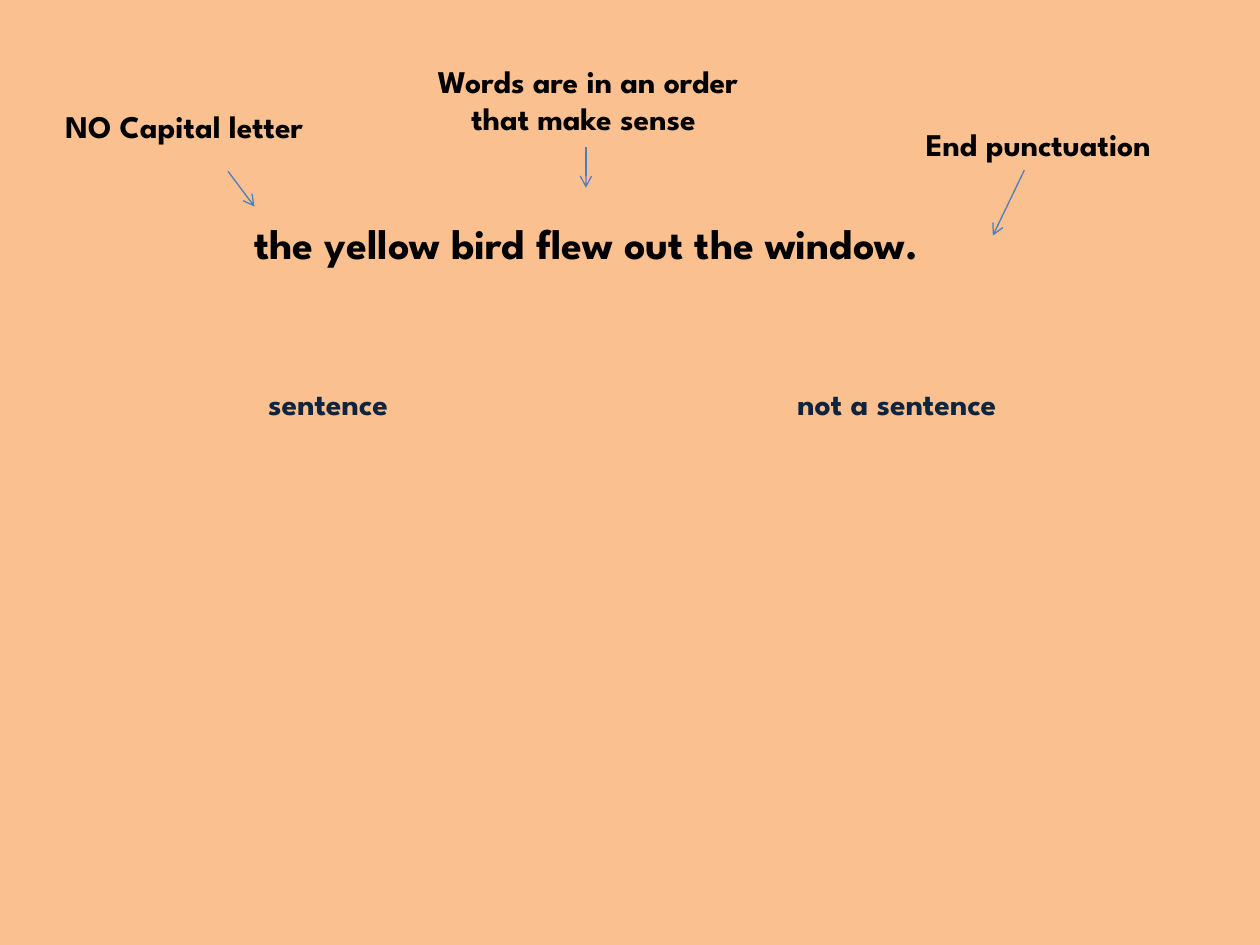
from pptx import Presentation
from pptx.dml.color import RGBColor
from pptx.enum.shapes import MSO_CONNECTOR
from pptx.enum.text import MSO_AUTO_SIZE, PP_ALIGN
from pptx.oxml.ns import qn
from pptx.util import Inches, Pt
from lxml import etree

STRAIGHT = MSO_CONNECTOR.STRAIGHT
GROW = MSO_AUTO_SIZE.SHAPE_TO_FIT_TEXT
LEFT, CENTER = PP_ALIGN.LEFT, PP_ALIGN.CENTER

PEACH = RGBColor(0xFA, 0xC0, 0x90)
BLACK = RGBColor(0x00, 0x00, 0x00)
NAVY = RGBColor(0x0F, 0x24, 0x3E)
BLUE = RGBColor(0x4B, 0x7E, 0xBC)
FONT = "League Spartan"

prs = Presentation()
prs.slide_width, prs.slide_height = Inches(10), Inches(7.5)
COL = prs.slide_width / 100
ROW = prs.slide_height / 75

s = prs.slides.add_slide(prs.slide_layouts[6])
s.background.fill.solid()
s.background.fill.fore_color.rgb = PEACH


def grid(*cells):
    return [round(c * unit) for c, unit in zip(cells, (COL, ROW) * 2)]


labels = [
    ("the yellow bird flew out the window.", (19.2, 16.8, 60, 5), 24, BLACK, LEFT),
    ("sentence", (20.3, 30, 15.8, 4), 18, NAVY, LEFT),
    ("not a sentence", (62.3, 30, 29.2, 4), 18, NAVY, LEFT),
    ("NO Capital letter", (4.2, 8, 22.5, 4), 18, BLACK, LEFT),
    ("Words are in an order that make sense ", (32.5, 4.4, 28.3, 7.1), 18, BLACK, CENTER),
    ("End punctuation", (72.5, 9.4, 24.2, 4), 18, BLACK, LEFT),
]
for text, box, size, color, align in labels:
    tf = s.shapes.add_textbox(*grid(*box)).text_frame
    tf.word_wrap = True
    tf.auto_size = GROW
    p = tf.paragraphs[0]
    p.text = text
    p.alignment = align
    font = p.runs[0].font
    font.name, font.size, font.bold = FONT, Pt(size), True
    font.color.rgb = color

arrows = [
    (18.1, 13.6, 20.2, 16.4),
    (46.5, 11.7, 46.5, 14.9),
    (81.3, 13.5, 78.8, 18.7),
]
for ends in arrows:
    sp = s.shapes.add_connector(STRAIGHT, *grid(*ends))
    sp.line.color.rgb = BLUE
    sp.line.width = Pt(0.75)
    etree.SubElement(sp.line._get_or_add_ln(), qn("a:tailEnd"), type="arrow")
    etree.SubElement(sp._element.spPr, qn("a:effectLst"))

prs.save("out.pptx")
